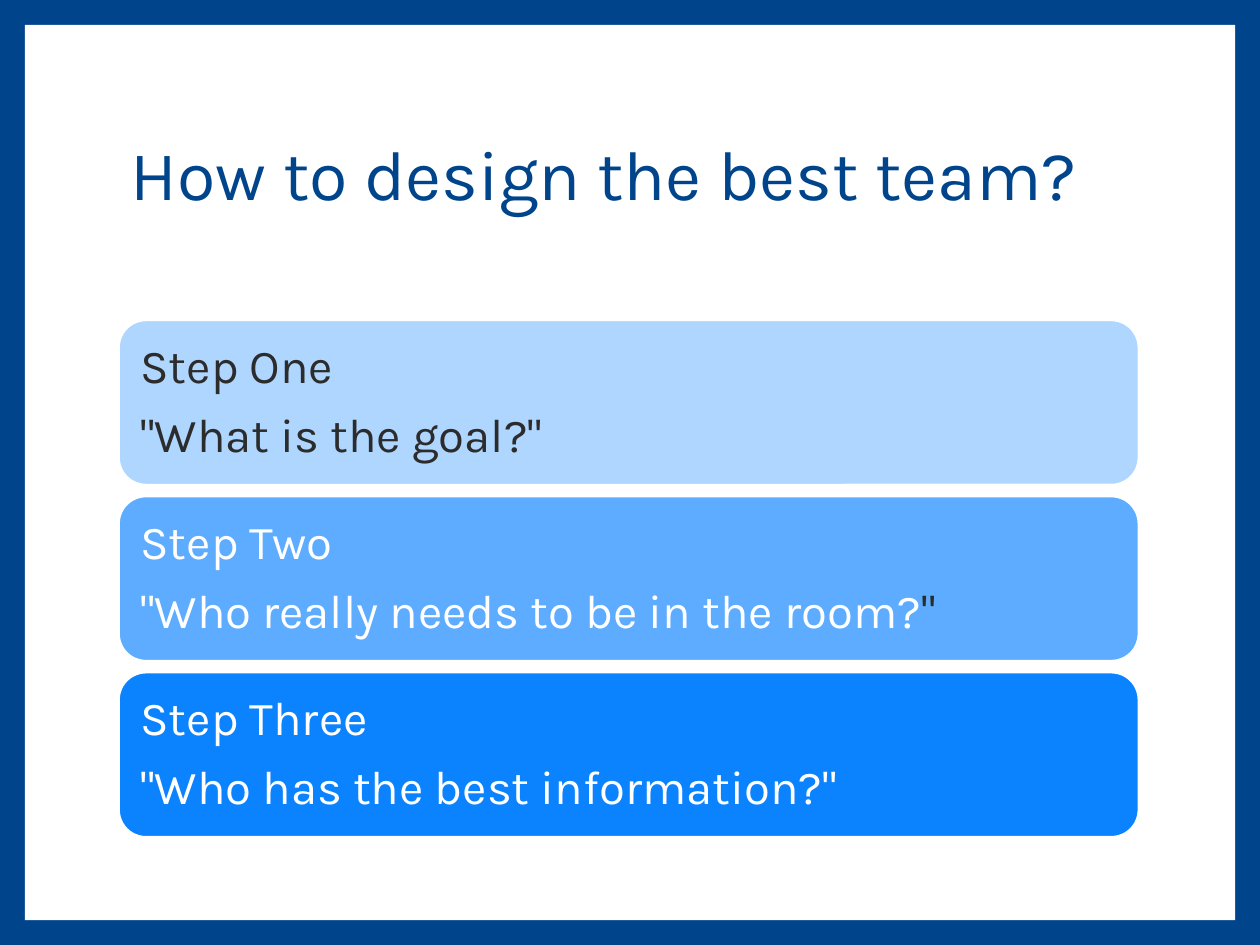
from pptx import Presentation
from pptx.dml.color import RGBColor
from pptx.enum.shapes import MSO_SHAPE
from pptx.enum.text import MSO_ANCHOR, PP_ALIGN
from pptx.util import Cm, Pt

RECT, ROUND = MSO_SHAPE.RECTANGLE, MSO_SHAPE.ROUNDED_RECTANGLE
MIDDLE, LEFT = MSO_ANCHOR.MIDDLE, PP_ALIGN.LEFT

NAVY, WHITE, DARK = "00458B", "FFFFFF", "2C2C2C"
FONT = "Karla"
TITLE = "How to design the best team?"

# Each step: fill, then lines of (text, colour) runs
STEPS = [
    ("AED6FF", [[("Step One", DARK)],
                [('"What is the goal?"', DARK)]]),
    ("5DACFF", [[("Step Two", WHITE)],
                [('"Who really needs to be in the room?', WHITE), ('"', DARK)]]),
    ("0B83FF", [[("Step Three", WHITE)],
                [('"Who has the best information?"', WHITE)]]),
]

SIDE, WIDTH = 2.39, 20.57
TOP, HEIGHT, PITCH = 6.45, 3.33, 3.55
EDGE, INSET = 0.5, 0.28
PAGE_W, PAGE_H = 25.4, 19.05

FRAME = {"word_wrap": True, "vertical_anchor": MIDDLE}
PAD = {"margin_" + side: Cm(INSET) for side in ("left", "top", "right", "bottom")}
PARA = {"alignment": LEFT, "line_spacing": 0.9}
GAP = {"space_after": Pt(10.5)}


def rgb(code):
    return RGBColor.from_string(code)


def apply(thing, values):
    for name, value in values.items():
        setattr(thing, name, value)


def box(slide, kind, place, fill):
    """Add a shadowless filled shape without a line."""
    shape = slide.shapes.add_shape(kind, *map(Cm, place))
    shape.shadow.inherit = False
    shape.fill.solid()
    shape.fill.fore_color.rgb = rgb(fill)
    shape.line.fill.background()
    return shape


def write(shape, lines, size, frame, para):
    text = shape.text_frame
    apply(text, frame)
    for i, line in enumerate(lines):
        item = text.add_paragraph() if i else text.paragraphs[0]
        apply(item, para)
        for words, colour in line:
            run = item.add_run()
            run.text = words
            apply(run.font, {"name": FONT, "size": Pt(size)})
            run.font.color.rgb = rgb(colour)


def main():
    deck = Presentation()
    apply(deck, {"slide_width": Cm(PAGE_W), "slide_height": Cm(PAGE_H)})
    slide = deck.slides.add_slide(deck.slide_layouts[6])
    back = slide.background.fill
    back.solid()
    back.fore_color.rgb = rgb(NAVY)

    box(slide, RECT, (EDGE, EDGE, PAGE_W - 2 * EDGE, PAGE_H - 2 * EDGE), WHITE)
    title = slide.shapes.add_textbox(Cm(SIDE), Cm(1.7), Cm(WIDTH), Cm(3.76))
    write(title, [[(TITLE, NAVY)]], 40, FRAME, PARA)

    for i, (fill, lines) in enumerate(STEPS):
        card = box(slide, ROUND, (SIDE, TOP + i * PITCH, WIDTH, HEIGHT), fill)
        card.line.color.rgb = rgb(WHITE)
        card.line.width = Pt(1.5)
        write(card, lines, 27, FRAME | PAD, PARA | GAP)

    deck.save("out.pptx")


if __name__ == "__main__":
    main()
